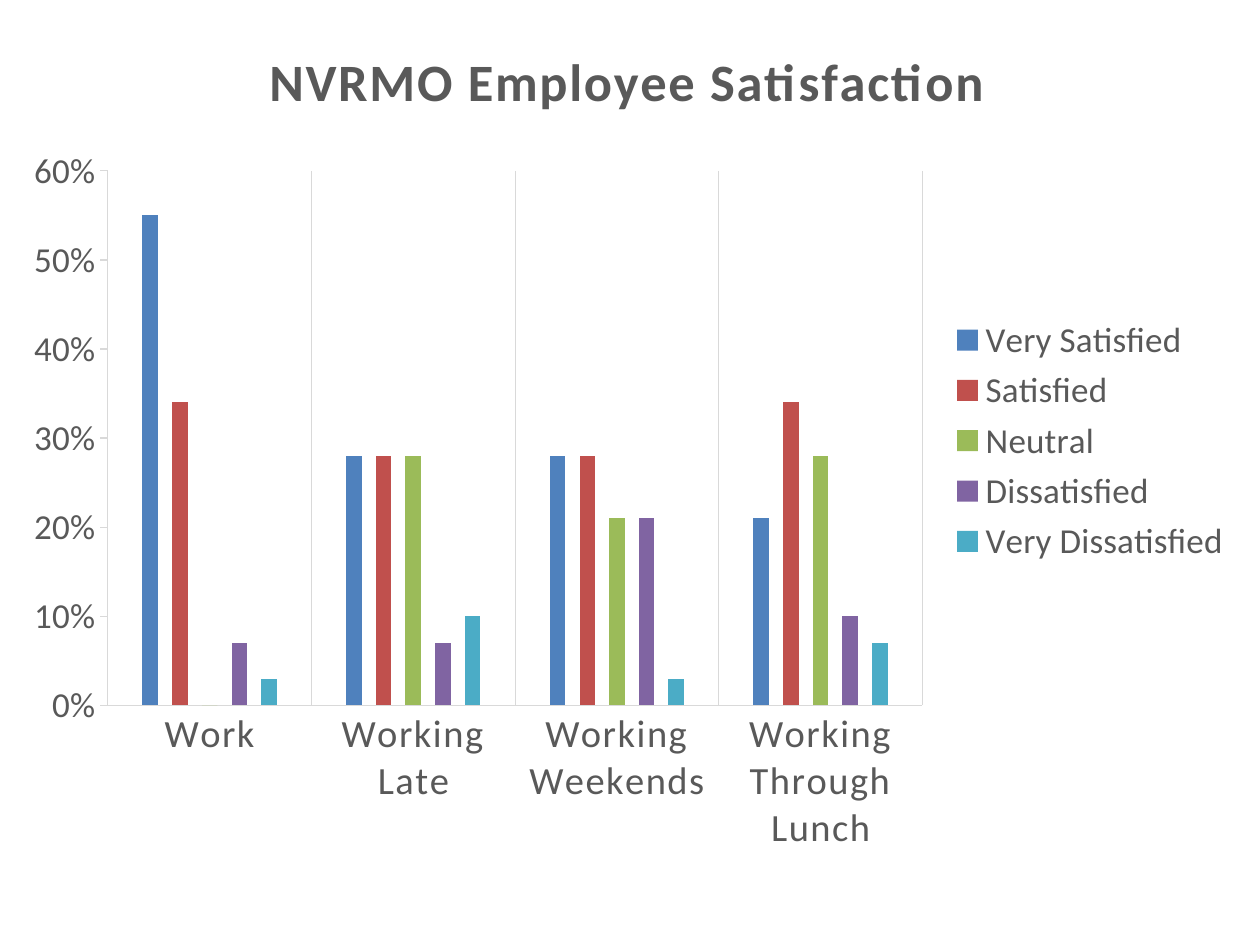
from dataclasses import dataclass

from pptx import Presentation
from pptx.chart.axis import CategoryAxis, ValueAxis
from pptx.chart.chart import Chart
from pptx.chart.data import CategoryChartData
from pptx.dml.color import RGBColor
from pptx.enum.chart import XL_CHART_TYPE, XL_LEGEND_POSITION, XL_TICK_MARK
from pptx.oxml import parse_xml
from pptx.text.text import Font
from pptx.util import Cm, Pt

CLUSTERED = XL_CHART_TYPE.COLUMN_CLUSTERED
LEGEND_RIGHT = XL_LEGEND_POSITION.RIGHT
TICK_NONE, TICK_OUTSIDE = XL_TICK_MARK.NONE, XL_TICK_MARK.OUTSIDE
BLANK_LAYOUT = 6
CHART_NS = "http://schemas.openxmlformats.org/drawingml/2006/chart"


@dataclass(frozen=True)
class Theme:
    font: str = "Calibri"
    text: str = "595959"
    rule: str = "D9D9D9"
    rule_width: float = 0.75
    title_size: int = 30
    category_size: int = 22
    label_size: int = 20
    letter_spacing: int = 100  # hundredths of a point


@dataclass(frozen=True)
class Rating:
    name: str
    shares: tuple[float, ...]
    color: str


THEME = Theme()
TITLE = "NVRMO Employee Satisfaction"
TOPICS = ("Work", "Working Late", "Working Weekends", "Working Through Lunch")
RATINGS = (
    Rating("Very Satisfied", (0.55, 0.28, 0.28, 0.21), "4F81BD"),
    Rating("Satisfied", (0.34, 0.28, 0.28, 0.34), "C0504D"),
    Rating("Neutral", (0, 0.28, 0.21, 0.28), "9BBB59"),
    Rating("Dissatisfied", (0.07, 0.07, 0.21, 0.10), "8064A2"),
    Rating("Very Dissatisfied", (0.03, 0.10, 0.03, 0.07), "4BACC6"),
)
# Inner plot area as fractions of the chart
PLOT_AREA = {"x": 0.08, "y": 0.185, "w": 0.659, "h": 0.624}


def style_font(font: Font, size: int, bold: bool = False, spaced: bool = False) -> None:
    font.name = THEME.font
    font.size = Pt(size)
    font.bold = bold
    font.color.rgb = RGBColor.from_string(THEME.text)
    if spaced:
        font._element.set("spc", str(THEME.letter_spacing))


def style_axis(axis: CategoryAxis | ValueAxis, number_format: str, tick: XL_TICK_MARK) -> None:
    lines = [axis.format.line]
    if axis.has_major_gridlines:
        lines.append(axis.major_gridlines.format.line)
    for line in lines:
        line.color.rgb = RGBColor.from_string(THEME.rule)
        line.width = Pt(THEME.rule_width)
    axis.major_tick_mark = tick
    axis.minor_tick_mark = TICK_NONE
    axis.tick_labels.number_format = number_format
    axis.tick_labels.number_format_is_linked = False


def place_plot_area(chart: Chart) -> None:
    """Fix the inner plot area, leaving room for wrapped category labels."""
    plot_area = chart._chartSpace.chart.plotArea
    for layout in plot_area.findall(f"{{{CHART_NS}}}layout"):
        plot_area.remove(layout)
    modes = '<c:xMode val="edge"/><c:yMode val="edge"/>'
    bounds = "".join(f'<c:{key} val="{value}"/>' for key, value in PLOT_AREA.items())
    plot_area.insert(0, parse_xml(
        f'<c:layout xmlns:c="{CHART_NS}"><c:manualLayout>'
        f'<c:layoutTarget val="inner"/>{modes}{bounds}</c:manualLayout></c:layout>'
    ))


def style_chart(chart: Chart) -> None:
    style_font(chart.font, THEME.label_size)

    chart.has_title = True
    heading = chart.chart_title.text_frame
    heading.text = TITLE
    style_font(heading.paragraphs[0].runs[0].font, THEME.title_size, bold=True, spaced=True)
    chart.chart_title.include_in_layout = False

    chart.has_legend = True
    chart.legend.position = LEGEND_RIGHT
    chart.legend.include_in_layout = False
    style_font(chart.legend.font, THEME.label_size)

    topics, shares = chart.category_axis, chart.value_axis
    topics.has_major_gridlines = True
    shares.has_major_gridlines = False
    shares.minimum_scale, shares.maximum_scale, shares.major_unit = 0, 0.6, 0.1
    style_axis(topics, "0.00%", TICK_NONE)
    style_axis(shares, "0%", TICK_OUTSIDE)
    style_font(topics.tick_labels.font, THEME.category_size, spaced=True)
    style_font(shares.tick_labels.font, THEME.label_size)

    columns = chart.plots[0]
    columns.gap_width = 444
    columns.overlap = -90
    columns.vary_by_categories = False
    for series, rating in zip(columns.series, RATINGS):
        series.format.fill.solid()
        series.format.fill.fore_color.rgb = RGBColor.from_string(rating.color)
    place_plot_area(chart)


def main() -> None:
    presentation = Presentation()
    presentation.slide_width, presentation.slide_height = Cm(25.4), Cm(19.05)
    slide = presentation.slides.add_slide(presentation.slide_layouts[BLANK_LAYOUT])

    survey = CategoryChartData(number_format="0.00%")
    survey.categories = TOPICS
    for rating in RATINGS:
        survey.add_series(rating.name, rating.shares)
    frame = slide.shapes.add_chart(
        CLUSTERED, Cm(0.18), Cm(0.25), Cm(24.92), Cm(17.27), survey
    )
    style_chart(frame.chart)
    presentation.save("out.pptx")


if __name__ == "__main__":
    main()
